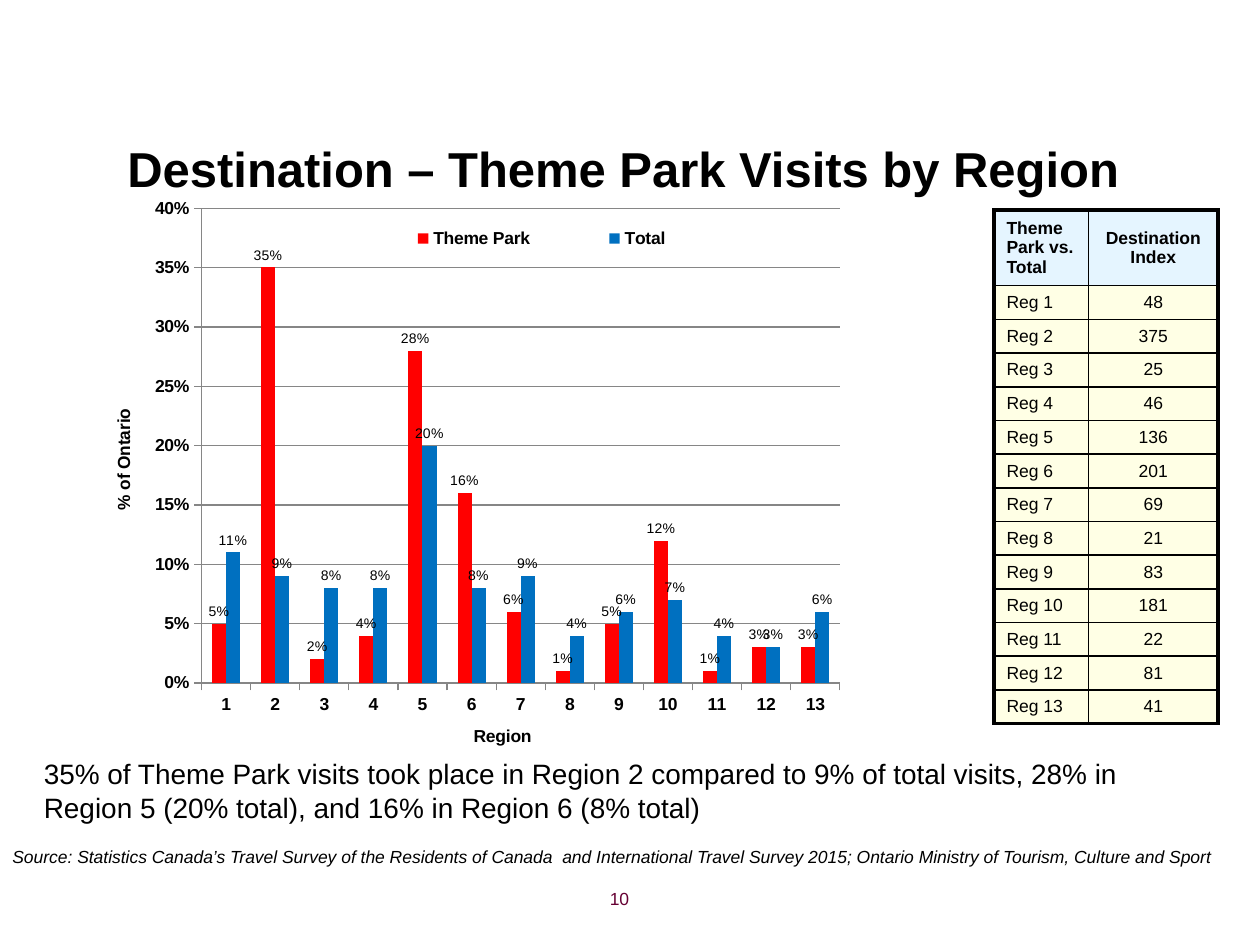
from lxml.etree import SubElement
from pptx import Presentation
from pptx.chart.data import CategoryChartData
from pptx.dml.color import RGBColor
from pptx.enum.chart import XL_CHART_TYPE as ChartType, XL_LABEL_POSITION as LabelPosition
from pptx.enum.chart import XL_LEGEND_POSITION as LegendPosition, XL_TICK_MARK as TickMark
from pptx.enum.text import MSO_ANCHOR as Anchor, PP_ALIGN as Align
from pptx.oxml.ns import qn
from pptx.util import Pt

BLACK = RGBColor(0x00, 0x00, 0x00)
GREY = RGBColor(0x86, 0x86, 0x86)
PLUM = RGBColor(0x66, 0x00, 0x33)
RED = RGBColor(0xFF, 0x00, 0x00)
BLUE = RGBColor(0x00, 0x70, 0xC0)
PALE_BLUE = RGBColor(0xCC, 0xEC, 0xFF)
PALE_YELLOW = RGBColor(0xFF, 0xFF, 0xCC)

THEME_PARK = [0.05, 0.35, 0.02, 0.04, 0.28, 0.16, 0.06, 0.01, 0.05, 0.12, 0.01, 0.03, 0.03]
TOTAL = [0.11, 0.09, 0.08, 0.08, 0.2, 0.08, 0.09, 0.04, 0.06, 0.07, 0.04, 0.03, 0.06]
INDEXES = [48, 375, 25, 46, 136, 201, 69, 21, 83, 181, 22, 81, 41]
REGIONS = range(1, 14)


class RegionSlide:
    """Holds the house style and the slide being filled."""

    typeface = "Arial"

    def __init__(self, deck):
        self.slide = deck.slides.add_slide(deck.slide_layouts[5])

    def style(self, font, size, color=BLACK, bold=False, italic=False):
        font.name, font.size, font.bold, font.italic = self.typeface, Pt(size), bold, italic
        font.color.rgb = color

    def fill_text(self, frame, text, size, align=Align.LEFT, **look):
        frame.text = text
        frame.word_wrap = True
        paragraph = frame.paragraphs[0]
        paragraph.alignment = align
        self.style(paragraph.runs[0].font, size, **look)

    def title(self, text, left, top, width, height):
        heading = self.slide.shapes.title
        heading.left, heading.top = Pt(left), Pt(top)
        heading.width, heading.height = Pt(width), Pt(height)
        heading.text_frame.vertical_anchor = Anchor.MIDDLE
        self.fill_text(heading.text_frame, text, 28, Align.CENTER, bold=True)

    def text(self, text, left, top, width, height, size, bullet=False, **look):
        box = self.slide.shapes.add_textbox(Pt(left), Pt(top), Pt(width), Pt(height))
        if bullet:
            properties = box.text_frame.paragraphs[0]._p.get_or_add_pPr()
            properties.set("marL", str(Pt(22.5)))
            properties.set("indent", str(Pt(-22.5)))
            SubElement(properties, qn("a:buChar")).set("char", "•")
        self.fill_text(box.text_frame, text, size, **look)

    def place(self, part, index, **fractions):
        for old in part.findall(qn("c:layout")):
            part.remove(old)
        layout = SubElement(part, qn("c:layout"))
        part.insert(index, layout)
        manual = SubElement(layout, qn("c:manualLayout"))
        if part.tag == qn("c:plotArea"):
            SubElement(manual, qn("c:layoutTarget")).set("val", "inner")
        for key in ("x", "y"):
            SubElement(manual, qn(f"c:{key}Mode")).set("val", "edge")
        for key, value in fractions.items():
            SubElement(manual, qn(f"c:{key}")).set("val", str(value))

    def axis(self, axis, caption, x, y):
        axis.major_tick_mark, axis.minor_tick_mark = TickMark.OUTSIDE, TickMark.NONE
        axis.format.line.color.rgb = GREY
        self.style(axis.tick_labels.font, 10, bold=True)
        caption_frame = axis.axis_title.text_frame
        caption_frame.text = caption
        self.style(caption_frame.paragraphs[0].runs[0].font, 10, bold=True)
        self.place(axis.axis_title._element, 1, x=x, y=y)

    def chart(self, regions, series, left, top, width, height):
        data = CategoryChartData(number_format="0%")
        data.categories = [str(region) for region in regions]
        for name, shares, _ in series:
            data.add_series(name, shares)
        chart = self.slide.shapes.add_chart(
            ChartType.COLUMN_CLUSTERED, Pt(left), Pt(top), Pt(width), Pt(height), data).chart
        self.style(chart.font, 18)
        chart.has_title = False
        columns = chart.plots[0]
        columns.gap_width, columns.overlap, columns.vary_by_categories = 150, 0, False
        for bars, (_, _, color) in zip(columns.series, series):
            bars.format.fill.solid()
            bars.format.fill.fore_color.rgb = color
            labels = bars.data_labels
            labels.show_value = True
            labels.position = LabelPosition.OUTSIDE_END
            labels.number_format, labels.number_format_is_linked = "0%", False
            self.style(labels.font, 8)

        self.axis(chart.category_axis, "Region", 0.46, 0.96)
        share_axis = chart.value_axis
        self.axis(share_axis, "% of Ontario", 0.03, 0.39)
        share_axis.axis_title.text_frame._txBody.bodyPr.set("rot", "-5400000")
        share_axis.minimum_scale, share_axis.maximum_scale, share_axis.major_unit = 0, 0.4, 0.05
        share_axis.tick_labels.number_format = "0%"
        share_axis.tick_labels.number_format_is_linked = False
        share_axis.major_gridlines.format.line.color.rgb = GREY

        chart.has_legend = True
        chart.legend.position = LegendPosition.RIGHT
        chart.legend.include_in_layout = False
        self.style(chart.legend.font, 10, bold=True)
        self.place(chart.legend._element, 1, x=0.31, y=0.05, w=0.47, h=0.07)
        self.place(chart._chartSpace.chart.plotArea, 0, x=0.14, y=0.03, w=0.76, h=0.86)

    def cell(self, cell, text, fill, align, bold, outer_sides):
        cell.fill.solid()
        cell.fill.fore_color.rgb = fill
        cell.vertical_anchor = Anchor.MIDDLE
        self.fill_text(cell.text_frame, text, 10, align, bold=bold)
        properties = cell._tc.tcPr
        alpha = SubElement(properties.find(".//" + qn("a:srgbClr")), qn("a:alpha"))
        alpha.set("val", "50000")
        for position, side in enumerate("LRTB"):
            border = SubElement(properties, qn(f"a:ln{side}"))
            border.set("w", str(Pt(2.25 if side in outer_sides else 1)))
            SubElement(SubElement(border, qn("a:solidFill")), qn("a:srgbClr")).set("val", str(BLACK))
            properties.insert(position, border)

    def table(self, rows, left, top, widths, header_height, row_height):
        last = len(rows) - 1
        grid = self.slide.shapes.add_table(
            len(rows), len(widths), Pt(left), Pt(top), Pt(sum(widths)),
            Pt(header_height + last * row_height)).table
        grid.first_row = grid.horz_banding = False
        for column, width in zip(grid.columns, widths):
            column.width = Pt(width)
        for r, entries in enumerate(rows):
            grid.rows[r].height = Pt(row_height if r else header_height)
            for c, entry in enumerate(entries):
                outer = ("R" if c else "L") + ("T" if r == 0 else "B" if r == last else "")
                self.cell(grid.cell(r, c), entry, PALE_YELLOW if r else PALE_BLUE,
                          Align.CENTER if c else Align.LEFT, r == 0, outer)


def main():
    deck = Presentation()
    deck.slide_width, deck.slide_height = Pt(720), Pt(540)
    page = RegionSlide(deck)
    page.title("Destination – Theme Park Visits by Region ", 36, 72, 648, 48)
    page.text("10", 270, 504, 168, 25, 10, align=Align.CENTER, color=PLUM)
    page.text("Source: Statistics Canada’s Travel Survey of the Residents of Canada  and International "
              "Travel Survey 2015; Ontario Ministry of Tourism, Culture and Sport",
              0, 480, 706, 19.4, 10, italic=True)
    page.text("35% of Theme Park visits took place in Region 2 compared to 9% of total visits, "
              "28% in Region 5 (20% total), and 16% in Region 6 (8% total)",
              18, 429, 670, 46, 16, bullet=True)
    page.chart(REGIONS, [("Theme Park", THEME_PARK, RED), ("Total", TOTAL, BLUE)],
               48, 109.5, 480, 320)
    index_rows = [(f"Reg {region}", str(index)) for region, index in zip(REGIONS, INDEXES)]
    page.table([("Theme Park vs. Total", "Destination Index")] + index_rows,
               568, 120, (54, 74), 43.2, 19.2)
    deck.save("out.pptx")


if __name__ == "__main__":
    main()
